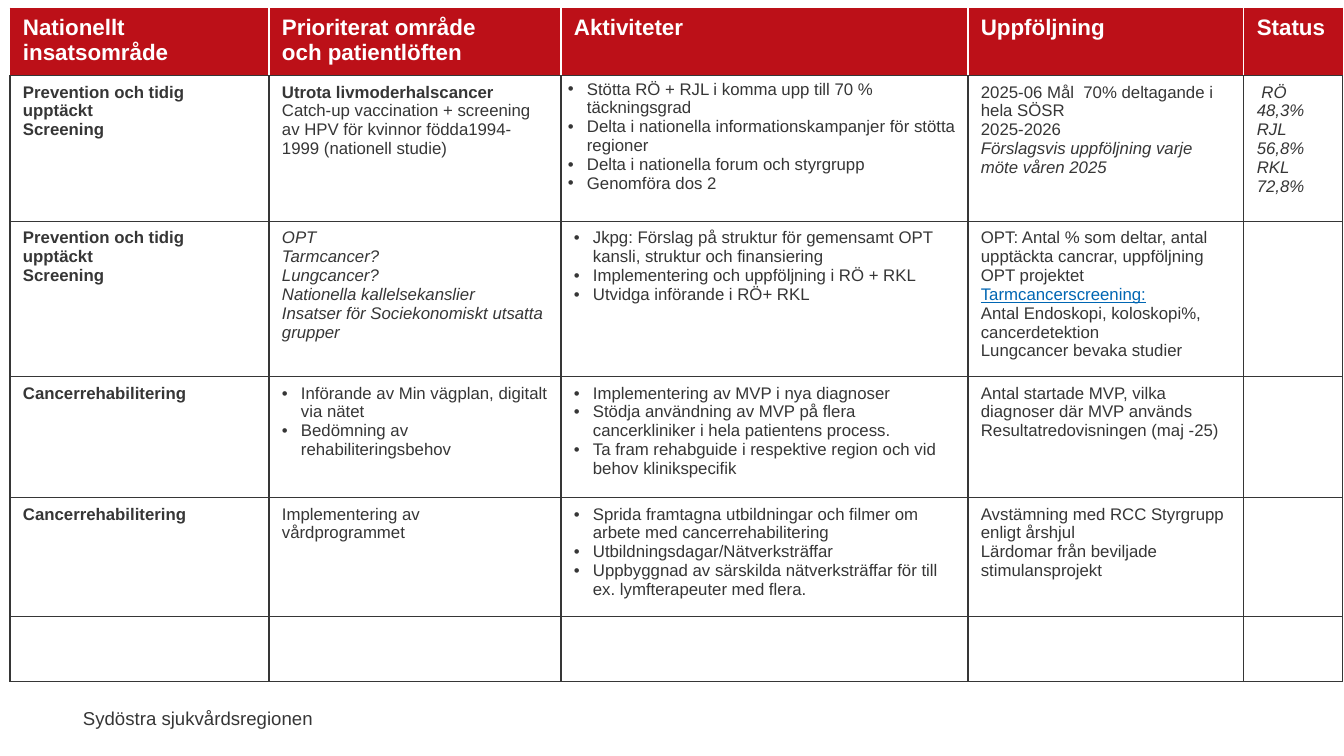
"""Build the table slide of prioritised areas in regional cancer care."""
from lxml import etree
from pptx import Presentation, util as u
from pptx.dml.color import RGBColor
from pptx.enum import text
from pptx.oxml.ns import qn

PLAIN, BOLD, ITALIC, BULLET, LINK = "plain", "bold", "italic", "bullet", "link"
INK, RED, BLUE, WHITE = "363636", "BC1018", "0066B3", "FFFFFF"
FONT = "Arial"

HEADINGS = ["Nationellt insatsområde", "Prioriterat område \noch patientlöften",
            "Aktiviteter", "Uppföljning", "Status"]
SCREENING = [(BOLD, "Prevention och tidig upptäckt"), (BOLD, "Screening")]
REHABILITATION = [(BOLD, "Cancerrehabilitering")]
AREAS = [
    [
        SCREENING,
        [(BOLD, "Utrota livmoderhalscancer"),
         (PLAIN, "Catch-up vaccination + screening av HPV för kvinnor födda1994-1999 (nationell studie)")],
        [(BULLET, "Stötta RÖ + RJL i komma upp till 70 % täckningsgrad"),
         (BULLET, "Delta i nationella informationskampanjer för stötta regioner"),
         (BULLET, "Delta i nationella forum och styrgrupp"),
         (BULLET, "Genomföra dos 2")],
        [(PLAIN, "2025-06 Mål  70% deltagande i hela SÖSR"),
         (PLAIN, "2025-2026"),
         (ITALIC, "Förslagsvis uppföljning varje möte våren 2025")],
        [(ITALIC, " RÖ 48,3%"), (ITALIC, "RJL 56,8%"), (ITALIC, "RKL 72,8%")],
    ],
    [
        SCREENING,
        [(ITALIC, "OPT"), (ITALIC, "Tarmcancer?"), (ITALIC, "Lungcancer?"),
         (ITALIC, "Nationella kallelsekanslier"),
         (ITALIC, "Insatser för Sociekonomiskt utsatta grupper")],
        [(BULLET, "Jkpg: Förslag på struktur för gemensamt OPT kansli, struktur och finansiering"),
         (BULLET, "Implementering och uppföljning i RÖ + RKL"),
         (BULLET, "Utvidga införande i RÖ+ RKL")],
        [(PLAIN, "OPT: Antal % som deltar, antal upptäckta cancrar, uppföljning OPT projektet"),
         (LINK, "Tarmcancerscreening:"),
         (PLAIN, "Antal Endoskopi, koloskopi%, cancerdetektion\nLungcancer bevaka studier")],
        [],
    ],
    [
        REHABILITATION,
        [(BULLET, "Införande av Min vägplan, digitalt via nätet"),
         (BULLET, "Bedömning av rehabiliteringsbehov")],
        [(BULLET, "Implementering av MVP i nya diagnoser"),
         (BULLET, "Stödja användning av MVP på flera cancerkliniker i hela patientens process."),
         (BULLET, "Ta fram rehabguide i respektive region och vid behov klinikspecifik")],
        [(PLAIN, "Antal startade MVP, vilka diagnoser där MVP används Resultatredovisningen (maj -25)")],
        [],
    ],
    [
        REHABILITATION,
        [(PLAIN, "Implementering av vårdprogrammet")],
        [(BULLET, "Sprida framtagna utbildningar och filmer om arbete med cancerrehabilitering"),
         (BULLET, "Utbildningsdagar/Nätverksträffar"),
         (BULLET, "Uppbyggnad av särskilda nätverksträffar för till ex. lymfterapeuter med flera.")],
        [(PLAIN, "Avstämning med RCC Styrgrupp enligt årshjul"),
         (PLAIN, "Lärdomar från beviljade stimulansprojekt")],
        [],
    ],
    [[] for _ in HEADINGS],
]
REGION = "Sydöstra sjukvårdsregionen"

TABLE_LEFT, TABLE_TOP = 10, 8
COLUMN_WIDTHS = [259, 292, 407, 276, 99]
ROW_HEIGHTS = [66, 146, 155, 121, 119, 65]
REGION_BOX = (71, 702, 252, 33)
INSETS = (13, 7, 13, 7)
TIGHT_INSETS = {(1, 2): (7, 4, 7, 0)}
BULLET_INDENT = 19


def px(length):
    """Turn px into EMU at 100.8 px to the inch."""
    return u.Emu(round(length * 914400 / 100.8))


def rgb(colour):
    """Turn a hex string into a colour."""
    return RGBColor.from_string(colour)


def set_font(paragraph, size, colour, style=PLAIN):
    """Set the font of a whole paragraph."""
    font = paragraph.font
    font.name, font.size, font.color.rgb = FONT, u.Pt(size), rgb(colour)
    font.bold, font.italic, font.underline = style == BOLD, style == ITALIC, style == LINK


def add_bullet(paragraph):
    """Give a paragraph a hanging bullet."""
    props = paragraph._p.get_or_add_pPr()
    props.set("marL", str(px(BULLET_INDENT)))
    props.set("indent", str(-px(BULLET_INDENT)))
    etree.SubElement(props, qn("a:buFont"), typeface=FONT)
    etree.SubElement(props, qn("a:buChar"), char="•")


def set_borders(cell, borders):
    """Draw the given (side, colour, points) borders of a cell."""
    props = cell._tc.get_or_add_tcPr()
    for side, colour, points in borders:
        line = etree.SubElement(props, qn(f"a:ln{side}"), w=str(u.Pt(points)))
        fill = etree.SubElement(line, qn("a:solidFill"))
        etree.SubElement(fill, qn("a:srgbClr"), val=colour)


def header_borders(column):
    """List the borders of a heading cell."""
    outer = {0: [("L", RED, 0.75)], len(HEADINGS) - 1: [("R", RED, 0.75)]}
    return outer.get(column, []) + [("T", RED, 0.75), ("B", INK, 1)]


def fill_cell(cell, lines, size, colour, background, borders, insets):
    """Write the lines of a cell and set its look."""
    set_borders(cell, borders)
    cell.fill.solid()
    cell.fill.fore_color.rgb = rgb(background)
    cell.margin_left, cell.margin_top, cell.margin_right, cell.margin_bottom = map(px, insets)
    frame = cell.text_frame
    for index, (style, words) in enumerate(lines):
        paragraph = frame.add_paragraph() if index else frame.paragraphs[0]
        paragraph.text = words
        if style == BULLET:
            add_bullet(paragraph)
        set_font(paragraph, size, BLUE if style == LINK else colour, style)


def add_areas(slide):
    """Add the table of areas."""
    table = slide.shapes.add_table(
        len(ROW_HEIGHTS), len(COLUMN_WIDTHS), px(TABLE_LEFT), px(TABLE_TOP),
        px(sum(COLUMN_WIDTHS)), px(sum(ROW_HEIGHTS))).table
    for column, width in zip(table.columns, COLUMN_WIDTHS):
        column.width = px(width)
    for row, height in zip(table.rows, ROW_HEIGHTS):
        row.height = px(height)
    for c, heading in enumerate(HEADINGS):
        fill_cell(table.cell(0, c), [(BOLD, heading)], 16, WHITE, RED, header_borders(c), INSETS)
    grid = [(side, INK, 1) for side in "LRTB"]
    for r, area in enumerate(AREAS, start=1):
        for c, lines in enumerate(area):
            fill_cell(table.cell(r, c), lines, 12, INK, WHITE, grid,
                      TIGHT_INSETS.get((r, c), INSETS))


def add_region(slide):
    """Add the name of the region below the table."""
    frame = slide.shapes.add_textbox(*map(px, REGION_BOX)).text_frame
    frame.word_wrap = False
    paragraph = frame.paragraphs[0]
    paragraph.text = REGION
    paragraph.alignment = text.PP_ALIGN.RIGHT
    set_font(paragraph, 13.3, INK)


def main():
    """Build and save the slide."""
    deck = Presentation()
    deck.slide_width, deck.slide_height = px(1344), px(756)
    slide = deck.slides.add_slide(deck.slide_layouts[6])
    add_region(slide)
    add_areas(slide)
    deck.save("out.pptx")


if __name__ == "__main__":
    main()
